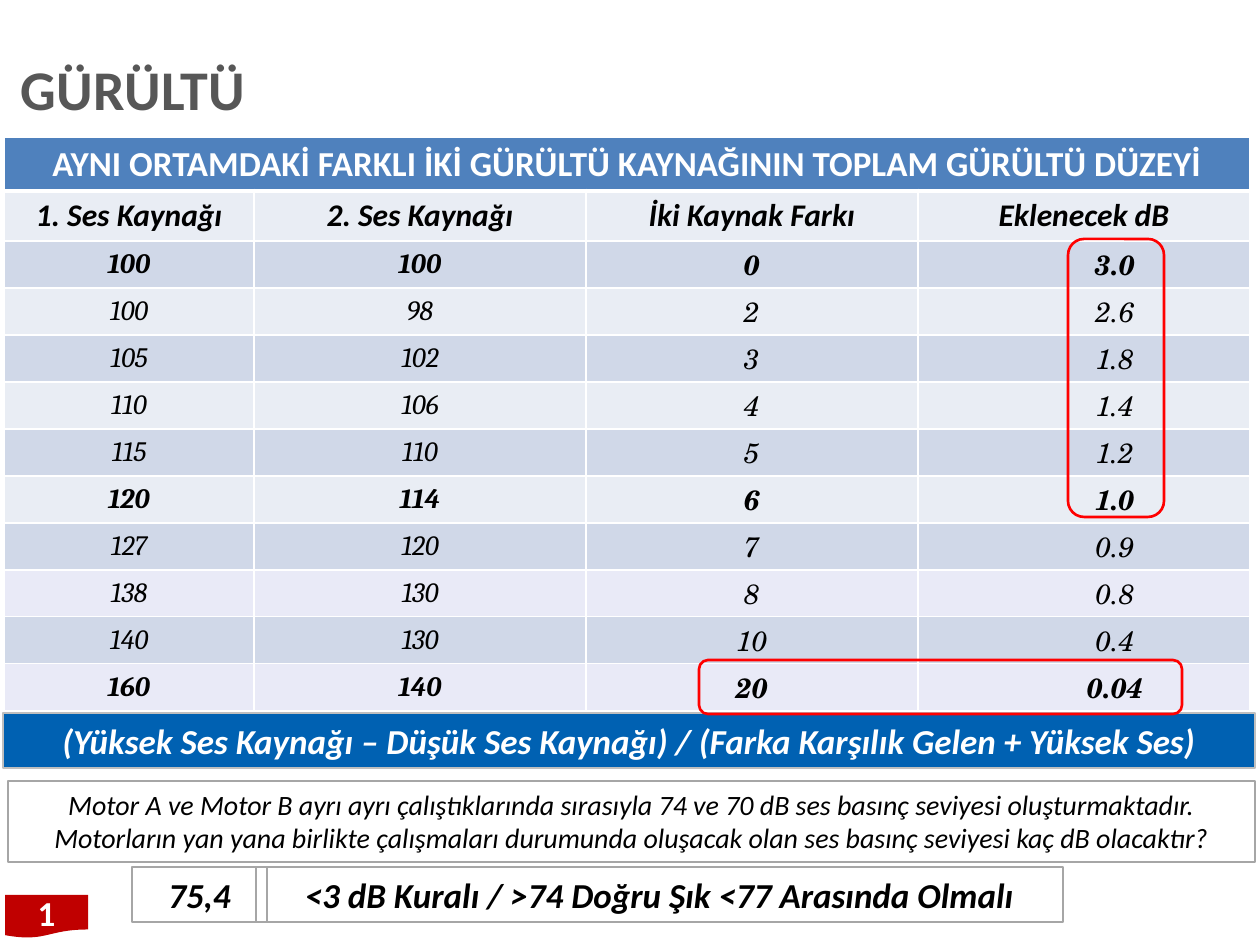
"""Builds the slide about the combined level of two noise sources."""
import pptx
import pptx.util
import pptx.dml.color
import pptx.enum.shapes
import pptx.enum.text
import pptx.oxml.ns
from lxml import etree

RGB = pptx.dml.color.RGBColor
SHAPES = pptx.enum.shapes.MSO_SHAPE
ALIGN = pptx.enum.text.PP_ALIGN
ANCHOR = pptx.enum.text.MSO_ANCHOR
FIT = pptx.enum.text.MSO_AUTO_SIZE

WHITE = RGB(0xFF, 0xFF, 0xFF)
BLACK = RGB(0, 0, 0)
GREY = RGB(0x57, 0x57, 0x57)
SILVER = RGB(0xBF, 0xBF, 0xBF)
OUTLINE = RGB(0xA6, 0xA6, 0xA6)
BLUE = RGB(0x00, 0x61, 0xB2)
HEADING = RGB(0x4F, 0x81, 0xBD)
BAND_DARK = RGB(0xD0, 0xD8, 0xE8)
BAND_LIGHT = RGB(0xE9, 0xED, 0xF4)
BAND_LILAC = RGB(0xE9, 0xEA, 0xF7)
RED = RGB(0xFF, 0, 0)
DARK_RED = RGB(0xC0, 0, 0)

EMU_PER_PX = 914400 / 126
CELL_INSETS = (13, 6, 13, 6)
NUMBER_INSETS = (9, 0, 9, 0)
COLUMNS = (250, 332, 332, 332)
ROW_HEIGHTS = (54, 50) + (47,) * 10

TITLE = "AYNI ORTAMDAKİ FARKLI İKİ GÜRÜLTÜ KAYNAĞININ TOPLAM GÜRÜLTÜ DÜZEYİ"
HEADERS = ("1. Ses Kaynağı", "2. Ses Kaynağı", "İki Kaynak Farkı", "Eklenecek dB")
LEVELS = (
    ("100", "100", "0", "3.0"),
    ("100", "98", "2", "2.6"),
    ("105", "102", "3", "1.8"),
    ("110", "106", "4", "1.4"),
    ("115", "110", "5", "1.2"),
    ("120", "114", "6", "1.0"),
    ("127", "120", "7", "0.9"),
    ("138", "130", "8", "0.8"),
    ("140", "130", "10", "0.4"),
    ("160", "140", "20", "0.04"),
)
BOLD_LEVELS = (0, 5, 9)
FIRST_LILAC = 7


def px(length):
    return round(length * EMU_PER_PX)


def write_text(para, text, size=20, color=BLACK, font="Calibri", bold=False,
               italic=False, align=ALIGN.CENTER):
    para.alignment = align
    span = para.add_run()
    span.text = text
    span.font.size = pptx.util.Pt(size)
    span.font.name = font
    span.font.bold = bold
    span.font.italic = italic
    span.font.color.rgb = color


def set_insets(target, insets):
    target.margin_left, target.margin_top, target.margin_right, target.margin_bottom = map(px, insets)


def add_element(parent, tag, **attributes):
    return etree.SubElement(parent, pptx.oxml.ns.qn(tag), **attributes)


class SlideBuilder:
    """Holds the current slide and draws each kind of element on it."""

    def __init__(self, page):
        self.page = page

    def text(self, bounds, text, insets, spacing, **style):
        box = self.page.shapes.add_textbox(*map(px, bounds))
        frame = box.text_frame
        frame.word_wrap = True
        frame.vertical_anchor = ANCHOR.MIDDLE
        set_insets(frame, insets)
        para = frame.paragraphs[0]
        para.line_spacing = spacing
        write_text(para, text, **style)

    def shape(self, kind, bounds, text=None, fill=None, line=None, width=1,
              grow=True, **style):
        box = self.page.shapes.add_shape(kind, *map(px, bounds))
        box.shadow.inherit = False
        if fill is None:
            box.fill.background()
        else:
            box.fill.solid()
            box.fill.fore_color.rgb = fill
        if line is None:
            box.line.fill.background()
        else:
            box.line.color.rgb = line
            box.line.width = pptx.util.Pt(width)
        if text:
            frame = box.text_frame
            frame.word_wrap = True
            frame.vertical_anchor = ANCHOR.TOP if grow else ANCHOR.MIDDLE
            if grow:
                frame.auto_size = FIT.SHAPE_TO_FIT_TEXT
            write_text(frame.paragraphs[0], text, **style)

    def cell(self, cell, text, fill, insets=CELL_INSETS, top=1, bottom=1,
             after=False, indent=0, **style):
        properties = cell._tc.get_or_add_tcPr()
        for side, width in (("L", 1), ("R", 1), ("T", top), ("B", bottom)):
            border = add_element(properties, f"a:ln{side}", w=str(pptx.util.Pt(width)))
            add_element(add_element(border, "a:solidFill"), "a:srgbClr", val=str(WHITE))
        cell.fill.solid()
        cell.fill.fore_color.rgb = fill
        cell.vertical_anchor = ANCHOR.MIDDLE
        set_insets(cell, insets)
        para = cell.text_frame.paragraphs[0]
        para_properties = para._p.get_or_add_pPr()
        if after:
            add_element(add_element(para_properties, "a:spcAft"), "a:spcPct", val="40000")
        if indent:
            para_properties.set("marL", "0")
            para_properties.set("indent", str(px(indent)))
        write_text(para, text, **style)

    def table(self, left, top):
        frame = self.page.shapes.add_table(
            len(ROW_HEIGHTS), len(COLUMNS),
            *map(px, (left, top, sum(COLUMNS), sum(ROW_HEIGHTS))))
        table = frame.table
        for column, width in zip(table.columns, COLUMNS):
            column.width = px(width)
        for row, height in zip(table.rows, ROW_HEIGHTS):
            row.height = px(height)
        table.cell(0, 0).merge(table.cell(0, len(COLUMNS) - 1))
        self.cell(table.cell(0, 0), TITLE, HEADING, bottom=3, color=WHITE, bold=True)
        for column, header in enumerate(HEADERS):
            self.cell(table.cell(1, column), header, BAND_LIGHT, top=3, after=True,
                      size=18, bold=True, italic=True)
        for index, values in enumerate(LEVELS):
            light = BAND_LILAC if index >= FIRST_LILAC else BAND_LIGHT
            fill = light if index % 2 else BAND_DARK
            for column, value in enumerate(values):
                source = column < 2
                self.cell(table.cell(index + 2, column), value, fill,
                          insets=CELL_INSETS if source else NUMBER_INSETS,
                          after=source, indent=62 if column == 3 else 0,
                          font="Cambria" if source else "TeX Gyre Schola",
                          size=16, bold=index in BOLD_LEVELS, italic=True)


def main():
    deck = pptx.Presentation()
    deck.slide_width, deck.slide_height = px(1260), px(945)
    builder = SlideBuilder(deck.slides.add_slide(deck.slide_layouts[6]))

    builder.text((21, 48, 1215, 89), "GÜRÜLTÜ", (0, 6, 0, 6), 0.9, size=32,
                 color=GREY, bold=True, align=ALIGN.LEFT)
    builder.table(4, 137)
    builder.shape(SHAPES.RECTANGLE, (3, 713, 1252, 55),
                  "(Yüksek Ses Kaynağı – Düşük Ses Kaynağı) / (Farka Karşılık Gelen + Yüksek Ses)",
                  fill=BLUE, line=SILVER, width=1.25, color=WHITE, bold=True, italic=True)
    builder.shape(SHAPES.FLOWCHART_DOCUMENT, (5, 895, 83, 43), "1", fill=DARK_RED,
                  grow=False, color=WHITE, bold=True)
    builder.shape(SHAPES.RECTANGLE, (8, 781, 1247, 81),
                  "Motor A ve Motor B ayrı ayrı çalıştıklarında sırasıyla 74 ve 70 dB ses basınç "
                  "seviyesi oluşturmaktadır. Motorların yan yana birlikte çalışmaları durumunda "
                  "oluşacak olan ses basınç seviyesi kaç dB olacaktır?",
                  line=OUTLINE, size=16, italic=True)
    for left, width, answer in (
        (132, 135, "75,4"),
        (256, 807, "<3 dB Kuralı / >74 Doğru Şık <77 Arasında Olmalı"),
    ):
        builder.shape(SHAPES.RECTANGLE, (left, 867, width, 55), answer,
                      line=OUTLINE, bold=True, italic=True)
    for bounds in ((1068, 239, 96, 278), (699, 660, 483, 54)):
        builder.shape(SHAPES.ROUNDED_RECTANGLE, bounds, line=RED, width=1.5)
    deck.save("out.pptx")


if __name__ == "__main__":
    main()
